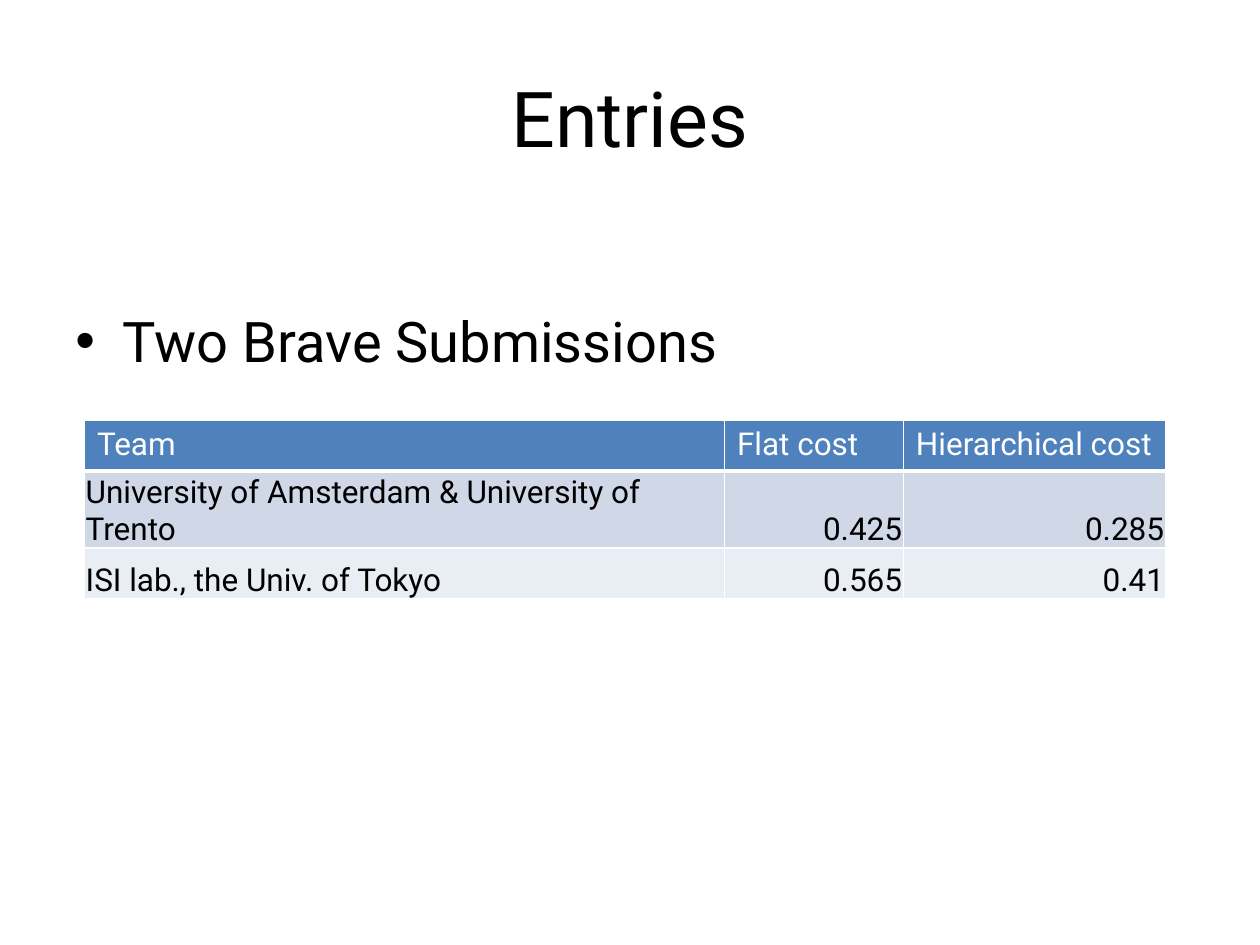
from dataclasses import dataclass

from lxml.etree import SubElement
from pptx import Presentation
from pptx.dml.color import RGBColor
from pptx.enum.text import MSO_ANCHOR, PP_ALIGN
from pptx.oxml import parse_xml
from pptx.oxml.ns import nsdecls, qn
from pptx.util import Pt


@dataclass(frozen=True)
class Theme:
    font: str = "Roboto"
    ink: str = "000000"
    white: str = "FFFFFF"
    head: str = "4F81BD"
    bands: tuple = ("D0D8E8", "E9EDF4")
    title: int = 44
    body: int = 32
    cell: int = 18


THEME = Theme()
ROWS = [
    ("Team", "Flat cost", "Hierarchical cost"),
    ("University of Amsterdam & University of Trento", "0.425", "0.285"),
    ("ISI lab., the Univ. of Tokyo", "0.565", "0.41"),
]
WIDTHS = (365.75, 102.25, 149.75)


def add_run(para, text, size, color=THEME.ink):
    run = para.add_run()
    run.text = text
    run.font.name = THEME.font
    run.font.size = Pt(size)
    run.font.color.rgb = RGBColor.from_string(color)


def place(shape, box):
    shape.left, shape.top, shape.width, shape.height = map(Pt, box)


def add_title(slide, box, text):
    title = slide.shapes.title
    place(title, box)
    frame = title.text_frame
    frame.vertical_anchor = MSO_ANCHOR.MIDDLE
    para = frame.paragraphs[0]
    para.alignment = PP_ALIGN.CENTER
    add_run(para, text, THEME.title)


def add_bullet(slide, box, text):
    frame = slide.shapes.add_textbox(*map(Pt, box)).text_frame
    frame.word_wrap = True
    para = frame.paragraphs[0]
    para.space_before = Pt(THEME.body * 0.2)
    add_run(para, text, THEME.body)
    # Hanging bullet
    props = para._p.get_or_add_pPr()
    props.set("marL", str(Pt(27)))
    props.set("indent", str(-Pt(27)))
    SubElement(props, qn("a:buFont"), typeface="Arial")
    SubElement(props, qn("a:buChar"), char="•")


def set_edges(cell, widths):
    """Draw white left, right, top and bottom borders, in that order."""
    props = cell._tc.get_or_add_tcPr()
    for spot, (side, width) in enumerate(zip("LRTB", widths)):
        props.insert(spot, parse_xml(
            f'<a:ln{side} {nsdecls("a")} w="{Pt(width)}"><a:solidFill>'
            f'<a:srgbClr val="{THEME.white}"/></a:solidFill></a:ln{side}>'))


def add_costs(slide, box, rows):
    table = slide.shapes.add_table(
        len(rows), len(WIDTHS), *map(Pt, box)).table
    for col, width in zip(table.columns, WIDTHS):
        col.width = Pt(width)
    for r, values in enumerate(rows):
        table.rows[r].height = Pt(box[3] / len(rows))
        for c, value in enumerate(values):
            cell = table.cell(r, c)
            para = cell.text_frame.paragraphs[0]
            cell.fill.solid()
            if r == 0:
                color, fill = THEME.white, THEME.head
            else:
                color, fill = THEME.ink, THEME.bands[(r - 1) % 2]
                cell.vertical_anchor = MSO_ANCHOR.BOTTOM
                cell.margin_left = cell.margin_right = Pt(0.75)
                cell.margin_top, cell.margin_bottom = Pt(0.75), Pt(0)
                if c > 0:
                    para.alignment = PP_ALIGN.RIGHT
            cell.fill.fore_color.rgb = RGBColor.from_string(fill)
            add_run(para, value, THEME.cell, color)
            # The rule under the header row is thicker
            set_edges(cell, (1, 1, 3 if r == 1 else 1, 3 if r == 0 else 1))


def main():
    deck = Presentation()
    deck.slide_width, deck.slide_height = Pt(720), Pt(540)
    slide = deck.slides.add_slide(deck.slide_layouts[5])
    add_title(slide, (36, 21.6, 648, 90), "Entries")
    add_bullet(slide, (36, 171.4, 648, 356.4), "Two Brave Submissions")
    add_costs(slide, (48.25, 240, sum(WIDTHS), 87.6), ROWS)
    deck.save("out.pptx")


if __name__ == "__main__":
    main()
